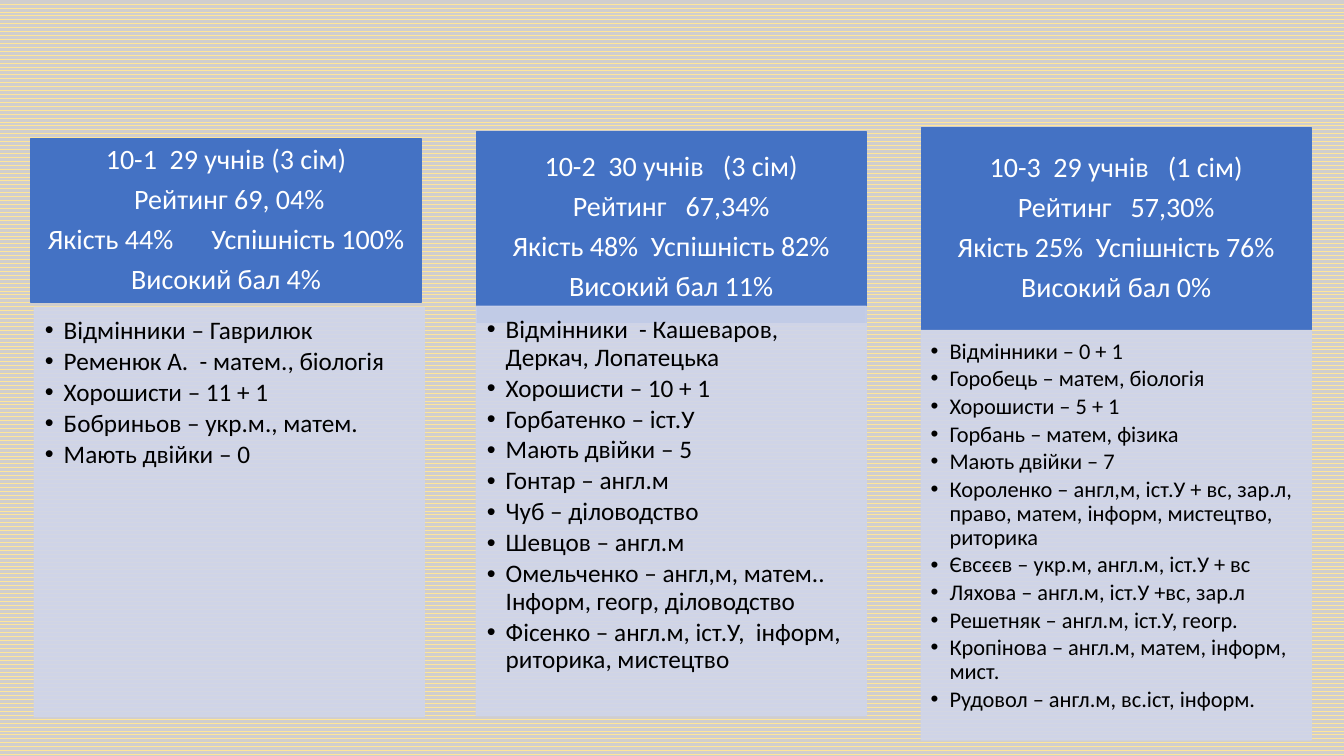
from dataclasses import dataclass

from lxml.etree import SubElement
from pptx import Presentation
from pptx.dml.color import RGBColor
from pptx.enum.dml import MSO_PATTERN
from pptx.enum.shapes import MSO_SHAPE
from pptx.enum.text import MSO_ANCHOR, PP_ALIGN
from pptx.oxml.ns import qn
from pptx.shapes.autoshape import Shape
from pptx.slide import Slide
from pptx.text.text import _Paragraph as Paragraph
from pptx.util import Pt

BLUE = RGBColor(0x44, 0x72, 0xC4)
PALE_BLUE = RGBColor(0xCF, 0xD5, 0xEA)
WHITE = RGBColor(0xFF, 0xFF, 0xFF)
BLACK = RGBColor(0x00, 0x00, 0x00)
YELLOW = RGBColor(0xFF, 0xE6, 0x99)
GREY = RGBColor(0xD0, 0xCE, 0xCE)

FONT = "Calibri"
CARD_WIDTH = 278.6
BODY_HEIGHT = 292.3
HEADER_SIZE = 20
FIRST_LEFT = 22.3
COLUMN_STEP = 317.9
INDENT = 13.5


@dataclass
class SchoolClass:
    header_top: float
    header_height: float
    body_shift: float
    body_top: float
    body_size: int
    summary: list[str]
    results: list[str]


CLASSES = [
    SchoolClass(
        99, 117, 2.2, 219.6, 18,
        ["10-1  29 учнів (3 сім)", " Рейтинг 69, 04%",
         "Якість 44%      Успішність 100% ", "Високий бал 4%"],
        ["Відмінники – Гаврилюк", "Ременюк А.  - матем., біологія",
         "Хорошисти – 11 + 1", "Бобриньов – укр.м., матем.", "Мають двійки – 0"],
    ),
    SchoolClass(
        94.3, 136.1, 0, 218.9, 18,
        ["10-2  30 учнів   (3 сім)", "Рейтинг   67,34%",
         "Якість 48%  Успішність 82%", "Високий бал 11%"],
        ["Відмінники  - Кашеваров, Деркач, Лопатецька", "Хорошисти – 10 + 1",
         "Горбатенко – іст.У", "Мають двійки – 5", "Гонтар – англ.м",
         "Чуб – діловодство", "Шевцов – англ.м",
         "Омельченко – англ,м, матем.. Інформ, геогр, діловодство",
         "Фісенко – англ.м, іст.У,  інформ, риторика, мистецтво"],
    ),
    SchoolClass(
        91.4, 144, 0, 236.2, 16,
        ["10-3  29 учнів   (1 сім)", "Рейтинг   57,30%",
         "Якість 25%  Успішність 76%", "Високий бал 0%"],
        ["Відмінники – 0 + 1", "Горобець – матем, біологія", "Хорошисти – 5 + 1",
         "Горбань – матем, фізика", "Мають двійки – 7",
         "Короленко – англ,м, іст.У + вс, зар.л, право, матем, інформ, мистецтво, риторика",
         "Євсєєв – укр.м, англ.м, іст.У + вс", "Ляхова – англ.м, іст.У +вс, зар.л",
         "Решетняк – англ.м, іст.У, геогр.",
         "Кропінова – англ.м, матем, інформ, мист.",
         "Рудовол – англ.м, вс.іст, інформ."],
    ),
]


def add_box(page: Slide, left: float, top: float, height: float, color: RGBColor) -> Shape:
    box = page.shapes.add_shape(
        MSO_SHAPE.RECTANGLE, Pt(left), Pt(top), Pt(CARD_WIDTH), Pt(height))
    box.shadow.inherit = False
    box.fill.solid()
    box.fill.fore_color.rgb = color
    box.line.color.rgb = color
    box.line.width = Pt(1)
    return box


def set_insets(box: Shape, left: float, top: float, right: float, bottom: float) -> None:
    frame = box.text_frame
    frame.word_wrap = True
    frame.margin_left, frame.margin_top = Pt(left), Pt(top)
    frame.margin_right, frame.margin_bottom = Pt(right), Pt(bottom)


def make_translucent(box: Shape, percent: int) -> None:
    for color in list(box._element.spPr.iter(qn("a:srgbClr"))):
        SubElement(color, qn("a:alpha"), val=str(percent * 1000))


def add_bullet(para: Paragraph) -> None:
    properties = para._p.get_or_add_pPr()
    properties.set("marL", str(Pt(INDENT)))
    properties.set("indent", str(-Pt(INDENT)))
    SubElement(properties, qn("a:buFont"), typeface="Arial")
    SubElement(properties, qn("a:buChar"), char="•")


def write_lines(box: Shape, lines: list[str], size: int, color: RGBColor,
                align: PP_ALIGN, gap_percent: int, bulleted: bool) -> None:
    frame = box.text_frame
    for index, line in enumerate(lines):
        para = frame.add_paragraph() if index else frame.paragraphs[0]
        para.alignment = align
        para.line_spacing = 0.9
        gap = SubElement(para._p.get_or_add_pPr(), qn("a:spcAft"))
        SubElement(gap, qn("a:spcPct"), val=str(gap_percent * 1000))
        if bulleted:
            add_bullet(para)
        span = para.add_run()
        span.text = line
        span.font.name = FONT
        span.font.size = Pt(size)
        span.font.color.rgb = color


def add_class(page: Slide, left: float, group: SchoolClass) -> None:
    header = add_box(page, left, group.header_top, group.header_height, BLUE)
    set_insets(header, 11.2, 6.4, 11.2, 6.4)
    header.text_frame.vertical_anchor = MSO_ANCHOR.MIDDLE
    write_lines(header, group.summary, HEADER_SIZE, WHITE, PP_ALIGN.CENTER, 35, False)

    size = group.body_size
    body = add_box(page, left + group.body_shift, group.body_top, BODY_HEIGHT, PALE_BLUE)
    make_translucent(body, 90)
    set_insets(body, 0.42 * size, 0.42 * size, 0.56 * size, 0.63 * size)
    body.text_frame.vertical_anchor = MSO_ANCHOR.TOP
    write_lines(body, group.results, size, BLACK, PP_ALIGN.LEFT, 15, True)


def main() -> None:
    deck = Presentation()
    deck.slide_width, deck.slide_height = Pt(960), Pt(540)
    page = deck.slides.add_slide(deck.slide_layouts[6])
    backdrop = page.background.fill
    backdrop.patterned()
    backdrop.pattern = MSO_PATTERN.WAVE
    backdrop.fore_color.rgb = YELLOW
    backdrop.back_color.rgb = GREY
    for column, group in enumerate(CLASSES):
        add_class(page, FIRST_LEFT + column * COLUMN_STEP, group)
    deck.save("out.pptx")


if __name__ == "__main__":
    main()
